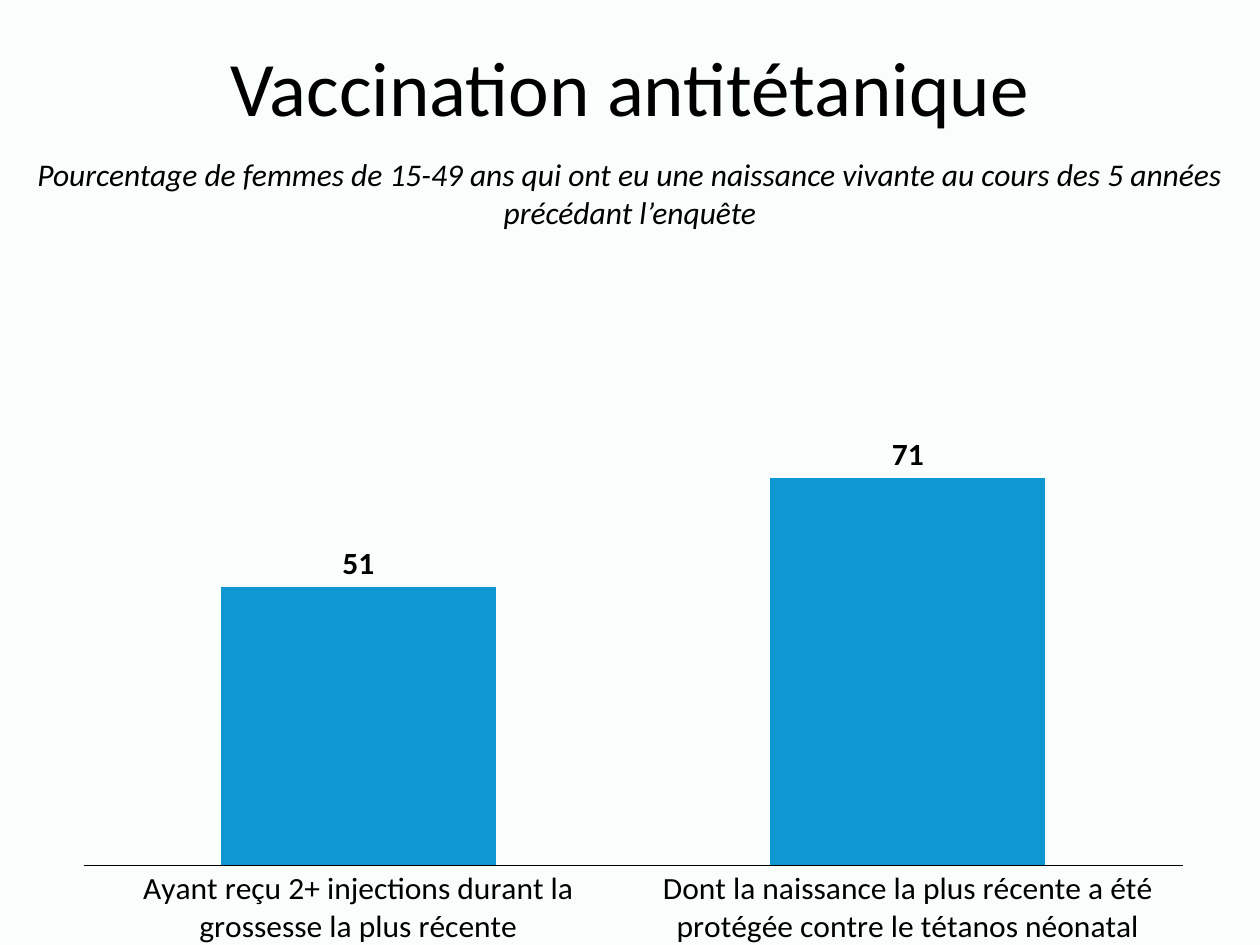
"""Build a slide with a column chart on tetanus vaccination."""
from pptx import Presentation
from pptx.chart.data import CategoryChartData
from pptx.dml.color import RGBColor
from pptx.enum.chart import XL_CHART_TYPE, XL_LABEL_POSITION, XL_TICK_MARK
from pptx.enum.text import MSO_ANCHOR, PP_ALIGN
from pptx.oxml import parse_xml
from pptx.oxml.ns import nsdecls, qn
from pptx.util import Inches, Pt

BLACK = RGBColor(0x00, 0x00, 0x00)
BLUE = RGBColor(0x0E, 0x97, 0xD0)
PALE_MINT = RGBColor(0xF9, 0xFD, 0xFC)
FONT = "Calibri"
VALUES = {
    "Ayant reçu 2+ injections durant la grossesse la plus récente": 51,
    "Dont la naissance la plus récente a été protégée contre le tétanos néonatal": 71,
}


def style_font(font, size, bold=False, italic=False):
    font.name = FONT
    font.size = Pt(size)
    font.bold = bold
    font.italic = italic
    font.color.rgb = BLACK


def add_text(page, text, top, height, size, anchor, spacing=1.0, italic=False):
    box = page.shapes.add_textbox(Inches(0), Inches(top), Inches(10), Inches(height))
    frame = box.text_frame
    frame.word_wrap = True
    frame.vertical_anchor = anchor
    para = frame.paragraphs[0]
    para.alignment = PP_ALIGN.CENTER
    para.line_spacing = spacing
    span = para.add_run()
    span.text = text
    style_font(span.font, size, italic=italic)


def place_plot(chart, left, top, width, height):
    plot_area = chart._chartSpace.chart.plotArea
    for layout in plot_area.findall(qn("c:layout")):
        plot_area.remove(layout)
    sizes = {"x": left, "y": top, "w": width, "h": height}
    modes = "".join(f'<c:{key}Mode val="edge"/>' for key in "xy")
    lengths = "".join(f'<c:{key} val="{value}"/>' for key, value in sizes.items())
    plot_area.insert(0, parse_xml(
        f'<c:layout {nsdecls("c")}><c:manualLayout><c:layoutTarget val="inner"/>'
        f"{modes}{lengths}</c:manualLayout></c:layout>"
    ))


def add_column_chart(page):
    data = CategoryChartData()
    data.categories = list(VALUES)
    data.add_series("Series 1", list(VALUES.values()))
    chart = page.shapes.add_chart(
        XL_CHART_TYPE.COLUMN_CLUSTERED,
        Inches(0.51), Inches(1.76), Inches(9.03), Inches(5.74), data,
    ).chart
    chart.has_legend = False
    chart.has_title = False
    style_font(chart.font, 10)

    value_axis = chart.value_axis
    value_axis.minimum_scale = 0
    value_axis.maximum_scale = 100
    value_axis.has_major_gridlines = False
    value_axis.visible = False

    category_axis = chart.category_axis
    category_axis.major_tick_mark = XL_TICK_MARK.NONE
    category_axis.format.line.color.rgb = BLACK
    category_axis.format.line.width = Pt(0.75)
    style_font(category_axis.tick_labels.font, 18)

    plot = chart.plots[0]
    plot.gap_width = 100
    plot.vary_by_categories = False
    series = plot.series[0]
    series.format.fill.solid()
    series.format.fill.fore_color.rgb = BLUE
    labels = series.data_labels
    labels.show_value = True
    labels.position = XL_LABEL_POSITION.OUTSIDE_END
    style_font(labels.font, 18, bold=True)
    place_plot(chart, 0.017, 0.138, 0.966, 0.771)


def main():
    deck = Presentation()
    deck.slide_width = Inches(10)
    deck.slide_height = Inches(7.5)
    page = deck.slides.add_slide(deck.slide_layouts[6])
    page.background.fill.solid()
    page.background.fill.fore_color.rgb = PALE_MINT
    add_text(page, "Vaccination antitétanique", 0, 1.45, 44, MSO_ANCHOR.MIDDLE, spacing=0.9)
    add_column_chart(page)
    add_text(
        page,
        "Pourcentage de femmes de 15-49 ans qui ont eu une naissance vivante "
        "au cours des 5 années précédant l’enquête",
        1.18, 0.71, 18, MSO_ANCHOR.TOP, italic=True,
    )
    deck.save("out.pptx")


if __name__ == "__main__":
    main()
